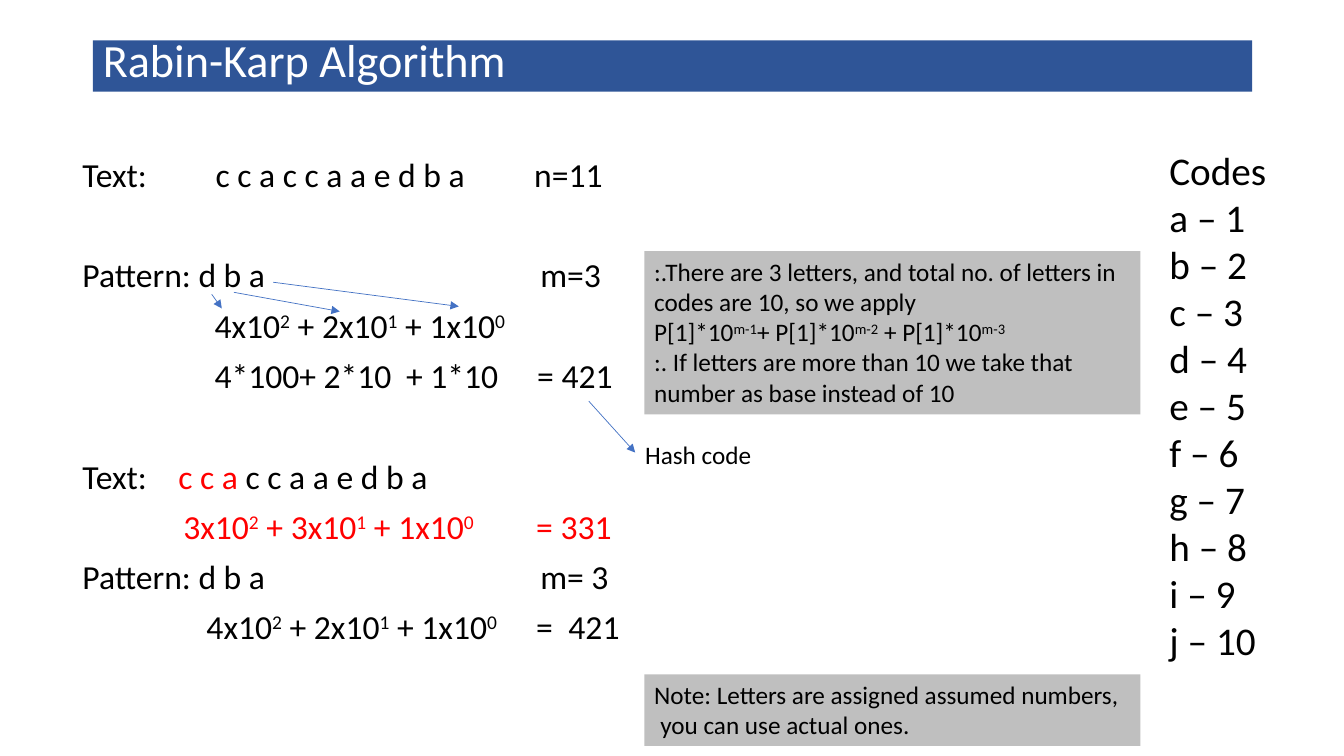
from dataclasses import dataclass

from lxml import etree
from pptx import Presentation
from pptx.dml.color import RGBColor
from pptx.enum.shapes import MSO_CONNECTOR, MSO_SHAPE
from pptx.enum.text import MSO_ANCHOR, MSO_AUTO_SIZE, PP_ALIGN
from pptx.oxml.ns import qn
from pptx.util import Inches, Pt

STRAIGHT = MSO_CONNECTOR.STRAIGHT
RECTANGLE = MSO_SHAPE.RECTANGLE
TOP, MIDDLE = MSO_ANCHOR.TOP, MSO_ANCHOR.MIDDLE
NO_AUTOFIT = MSO_AUTO_SIZE.NONE
LEFT = PP_ALIGN.LEFT


@dataclass(frozen=True)
class Theme:
    font: str = "Calibri"
    ink: RGBColor = RGBColor(0x00, 0x00, 0x00)
    red: RGBColor = RGBColor(0xFF, 0x00, 0x00)
    white: RGBColor = RGBColor(0xFF, 0xFF, 0xFF)
    banner: RGBColor = RGBColor(0x2F, 0x55, 0x97)
    note: RGBColor = RGBColor(0xBF, 0xBF, 0xBF)
    arrow: RGBColor = RGBColor(0x44, 0x72, 0xC4)
    title_size: int = 33
    codes_size: int = 28
    body_size: int = 24
    note_size: int = 18


THEME = Theme()
LINE_GAP, SECTION_GAP = 10, 46

# Each line: space before in points, tab stops in inches, (text, colour) parts.
WORKED_EXAMPLE = [
    (0, (1.32, 4.48), [("Text:\tc c a c c a a e d b a\tn=11", THEME.ink)]),
    (SECTION_GAP, (4.54,), [("Pattern: d b a\tm=3", THEME.ink)]),
    (LINE_GAP, (1.31,), [("\t4x10^2^ + 2x10^1^ + 1x10^0", THEME.ink)]),
    (LINE_GAP, (1.31, 3.21, 4.51),
     [("\t4*100+ 2*10\t+ 1*10\t= 421", THEME.ink)]),
    (SECTION_GAP, (0.95,),
     [("Text:\t", THEME.ink), ("c c a ", THEME.red),
      ("c c a a e d b a", THEME.ink)]),
    (LINE_GAP, (1.0, 4.5),
     [("\t3x10^2^ + 3x10^1^ + 1x10^0^\t= 331", THEME.red)]),
    (LINE_GAP, (4.54,), [("Pattern: d b a\tm= 3", THEME.ink)]),
    (LINE_GAP, (1.23, 4.5, 4.82),
     [("\t4x10^2^ + 2x10^1^ + 1x10^0^\t=\t421", THEME.ink)]),
]
BASE_NOTE = [
    ":.There are 3 letters, and total no. of letters in codes are 10, "
    "so we apply",
    "P[1]*10^m-1^+ P[1]*10^m-2^ + P[1]*10^m-3",
    ":. If letters are more than 10 we take that number as base "
    "instead of 10",
]
CODES_NOTE = ["Note: Letters are assigned assumed numbers,",
              "you can use actual ones."]
CODES = ["Codes"] + [f"{letter} – {number}"
                     for number, letter in enumerate("abcdefghij", 1)]
ARROWS = [
    (2.1, 2.92, 2.2, 3.06),
    (2.32, 2.9, 3.37, 3.09),
    (2.71, 2.8, 4.55, 3.04),
    (5.84, 3.98, 6.3, 4.49),
]


def add_runs(paragraph, text, size, color=THEME.ink):
    """Add text in which each part between carets is superscript."""
    for index, part in enumerate(text.split("^")):
        run = paragraph.add_run()
        run.text = part
        run.font.name = THEME.font
        run.font.size = Pt(size)
        run.font.color.rgb = color
        if index % 2:
            run.font._element.set("baseline", "30000")


def add_paragraph(frame, index):
    paragraph = frame.paragraphs[0] if index == 0 else frame.add_paragraph()
    paragraph.alignment = LEFT
    return paragraph


def write_lines(frame, lines, size):
    for index, line in enumerate(lines):
        add_runs(add_paragraph(frame, index), line, size)


def add_text_box(slide, box, wrap=True):
    frame = slide.shapes.add_textbox(*map(Inches, box)).text_frame
    frame.word_wrap = wrap
    return frame


def set_tab_stops(paragraph, stops):
    tab_list = etree.SubElement(paragraph._p.get_or_add_pPr(), qn("a:tabLst"))
    for stop in stops:
        etree.SubElement(tab_list, qn("a:tab"), pos=str(Inches(stop)), algn="l")


def fill_title(slide, box):
    title = slide.shapes.title
    title.left, title.top, title.width, title.height = map(Inches, box)
    title.fill.solid()
    title.fill.fore_color.rgb = THEME.banner
    frame = title.text_frame
    frame.auto_size = NO_AUTOFIT
    frame.vertical_anchor = MIDDLE
    paragraph = add_paragraph(frame, 0)
    paragraph.line_spacing = 0.7
    add_runs(paragraph, "Rabin-Karp Algorithm", THEME.title_size, THEME.white)


def add_worked_example(slide, box):
    frame = add_text_box(slide, box)
    for index, (gap, stops, parts) in enumerate(WORKED_EXAMPLE):
        paragraph = add_paragraph(frame, index)
        paragraph.line_spacing = 0.9
        if gap:
            paragraph.space_before = Pt(gap)
        set_tab_stops(paragraph, stops)
        for text, color in parts:
            add_runs(paragraph, text, THEME.body_size, color)


def add_note(slide, box, lines):
    shape = slide.shapes.add_shape(RECTANGLE, *map(Inches, box))
    shape.shadow.inherit = False
    shape.fill.solid()
    shape.fill.fore_color.rgb = THEME.note
    shape.line.fill.background()
    frame = shape.text_frame
    frame.word_wrap = True
    frame.vertical_anchor = TOP
    write_lines(frame, lines, THEME.note_size)
    return frame


def add_arrow(slide, ends):
    arrow = slide.shapes.add_connector(STRAIGHT, *map(Inches, ends))
    arrow.line.color.rgb = THEME.arrow
    arrow.line.width = Pt(0.5)
    etree.SubElement(arrow.line._get_or_add_ln(), qn("a:tailEnd"),
                     type="triangle")
    etree.SubElement(arrow._element.spPr, qn("a:effectLst"))


def build_slide(presentation):
    slide = presentation.slides.add_slide(presentation.slide_layouts[5])
    fill_title(slide, (0.92, 0.4, 11.5, 0.51))
    add_worked_example(slide, (0.72, 1.52, 6.53, 5.17))
    write_lines(add_text_box(slide, (11.5, 1.4, 1.28, 5.59)), CODES,
                THEME.codes_size)
    add_note(slide, (6.39, 2.49, 4.92, 1.62), BASE_NOTE)
    codes_note = add_note(slide, (6.39, 6.69, 4.92, 0.71), CODES_NOTE)
    codes_note.paragraphs[1]._p.get_or_add_pPr().set("marL", str(Inches(0.06)))
    for ends in ARROWS:
        add_arrow(slide, ends)
    write_lines(add_text_box(slide, (6.3, 4.31, 1.27, 0.4), wrap=False),
                ["Hash code"], THEME.note_size)


def main():
    presentation = Presentation()
    presentation.slide_width = Inches(13.33)
    presentation.slide_height = Inches(7.5)
    build_slide(presentation)
    presentation.save("out.pptx")


if __name__ == "__main__":
    main()
